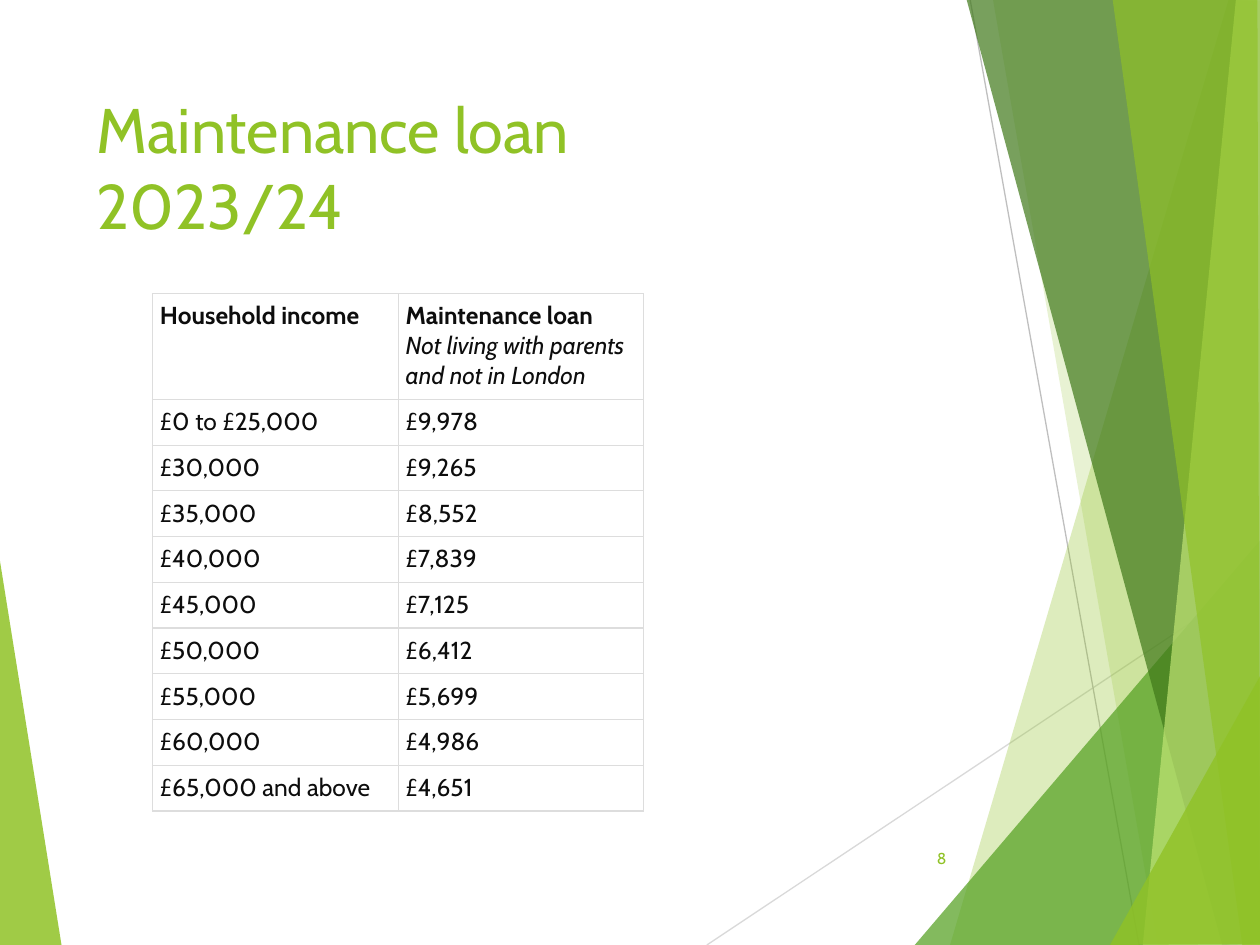
from dataclasses import dataclass

import lxml.etree
import pptx
import pptx.dml.color
import pptx.enum.shapes
import pptx.enum.text
import pptx.oxml.ns
import pptx.util

Inches = pptx.util.Inches
FONT = "Cabin"
COLOURS = {
    "lime": "90C226",
    "green": "54A021",
    "forest": "3F7819",
    "pale": "C0E474",
    "light_grey": "D9D9D9",
    "grey": "BFBFBF",
    "border": "DDDDDD",
    "ink": "0D0D0D",
    "white": "FFFFFF",
}


@dataclass(frozen=True)
class Facet:
    points: tuple[tuple[float, float], ...]
    colour: str
    opacity: int


@dataclass(frozen=True)
class Ray:
    start: tuple[float, float]
    end: tuple[float, float]
    colour: str


@dataclass(frozen=True)
class LoanBand:
    income: str
    loan: str


LEFT_FACET = Facet(((-0.01, 4.39), (0.49, 7.51), (-0.01, 7.5)), "lime", 85)
RAYS = (
    Ray((5.61, 7.5), (10.01, 4.57), "light_grey"),
    Ray((7.7, 0), (9.04, 7.5), "grey"),
)
RIGHT_FACETS = (
    Facet(((9.75, 0), (7.54, 7.5), (10.02, 7.51), (10.01, 0.01)), "lime", 30),
    Facet(((7.88, -0.01), (9.19, 7.5), (10.01, 7.5), (10.01, -0.01)), "lime", 20),
    Facet(((7.26, 7.5), (10, 4.29), (10.01, 7.5)), "green", 72),
    Facet(((7.67, -0.01), (9.7, 7.5), (10.01, 7.49), (10.01, -0.01)), "forest", 70),
    Facet(((9.81, -0.01), (9.07, 7.5), (10.01, 7.5), (10, -0.01)), "pale", 70),
    Facet(((8.83, -0.01), (9.86, 7.5), (10, 7.5), (9.98, -0.01)), "lime", 65),
    Facet(((8.81, 7.5), (10.01, 5.35), (10.01, 7.49)), "lime", 80),
)
LOAN_BANDS = (
    LoanBand("Household income", "Maintenance loan\nNot living with parents and not in London"),
    LoanBand("£0 to £25,000", "£9,978"),
    LoanBand("£30,000", "£9,265"),
    LoanBand("£35,000", "£8,552"),
    LoanBand("£40,000", "£7,839"),
    LoanBand("£45,000", "£7,125"),
    LoanBand("£50,000", "£6,412"),
    LoanBand("£55,000", "£5,699"),
    LoanBand("£60,000", "£4,986"),
    LoanBand("£65,000 and above", "£4,651"),
)


def rgb(colour: str) -> pptx.dml.color.RGBColor:
    return pptx.dml.color.RGBColor.from_string(COLOURS[colour])


def draw_facet(slide, facet: Facet) -> None:
    points = [(Inches(x), Inches(y)) for x, y in facet.points]
    builder = slide.shapes.build_freeform(*points[0])
    builder.add_line_segments(points[1:], close=True)
    shape = builder.convert_to_shape()
    shape.shadow.inherit = False
    shape.fill.solid()
    shape.fill.fore_color.rgb = rgb(facet.colour)
    shape.line.fill.background()
    fill_colour = shape.element.spPr.xpath("./a:solidFill/a:srgbClr")[0]
    alpha = lxml.etree.SubElement(fill_colour, pptx.oxml.ns.qn("a:alpha"))
    alpha.set("val", str(facet.opacity * 1000))


def draw_ray(slide, ray: Ray) -> None:
    connector = slide.shapes.add_connector(
        pptx.enum.shapes.MSO_CONNECTOR.STRAIGHT,
        *(Inches(value) for value in ray.start + ray.end),
    )
    connector.line.color.rgb = rgb(ray.colour)
    connector.line.width = pptx.util.Pt(0.75)
    lxml.etree.SubElement(connector.element.spPr, pptx.oxml.ns.qn("a:effectLst"))


def style_paragraph(paragraph, size: float, colour: str, bold=False, italic=False) -> None:
    for run in paragraph.runs:
        run.font.name = FONT
        run.font.size = pptx.util.Pt(size)
        run.font.color.rgb = rgb(colour)
        run.font.bold = bold
        run.font.italic = italic


def add_text(slide, box: tuple[float, ...], text: str, size: float, anchor, align) -> None:
    frame = slide.shapes.add_textbox(*(Inches(value) for value in box)).text_frame
    frame.word_wrap = True
    frame.vertical_anchor = anchor
    frame.text = text
    for paragraph in frame.paragraphs:
        paragraph.alignment = align
        style_paragraph(paragraph, size, "lime")


def add_borders(cell) -> None:
    properties = cell._tc.get_or_add_tcPr()
    for side in ("lnL", "lnR", "lnT", "lnB"):
        border = lxml.etree.SubElement(properties, pptx.oxml.ns.qn(f"a:{side}"))
        border.set("w", str(pptx.util.Pt(0.75)))
        fill = lxml.etree.SubElement(border, pptx.oxml.ns.qn("a:solidFill"))
        colour = lxml.etree.SubElement(fill, pptx.oxml.ns.qn("a:srgbClr"))
        colour.set("val", COLOURS["border"])


def fill_cell(cell, text: str, is_header: bool) -> None:
    cell.margin_left = cell.margin_right = Inches(0.06)
    cell.margin_top = cell.margin_bottom = Inches(0.06)
    add_borders(cell)
    cell.fill.solid()
    cell.fill.fore_color.rgb = rgb("white")
    cell.text_frame.text = text
    for index, paragraph in enumerate(cell.text_frame.paragraphs):
        style_paragraph(paragraph, 14, "ink", is_header and index == 0, index > 0)


def add_loan_table(slide) -> None:
    width, height, header_height = Inches(3.9), Inches(4.11), Inches(0.84)
    table = slide.shapes.add_table(
        len(LOAN_BANDS), 2, Inches(1.21), Inches(2.33), width, height
    ).table
    table.horz_banding = False
    band_height = (height - header_height) // (len(LOAN_BANDS) - 1)
    for index, band in enumerate(LOAN_BANDS):
        table.rows[index].height = header_height if index == 0 else band_height
        for column, text in enumerate((band.income, band.loan)):
            fill_cell(table.cell(index, column), text, index == 0)


def main() -> None:
    presentation = pptx.Presentation()
    presentation.slide_width = Inches(10)
    presentation.slide_height = Inches(7.5)
    slide = presentation.slides.add_slide(presentation.slide_layouts[6])
    draw_facet(slide, LEFT_FACET)
    for ray in RAYS:
        draw_ray(slide, ray)
    for facet in RIGHT_FACETS:
        draw_facet(slide, facet)
    anchors, aligns = pptx.enum.text.MSO_ANCHOR, pptx.enum.text.PP_ALIGN
    add_text(slide, (0.67, 0.67, 6.94, 1.44), "Maintenance loan\v2023/24", 36,
             anchors.TOP, aligns.LEFT)
    add_loan_table(slide)
    add_text(slide, (7.05, 6.61, 0.56, 0.4), "8", 9, anchors.MIDDLE, aligns.RIGHT)
    presentation.save("out.pptx")


if __name__ == "__main__":
    main()
